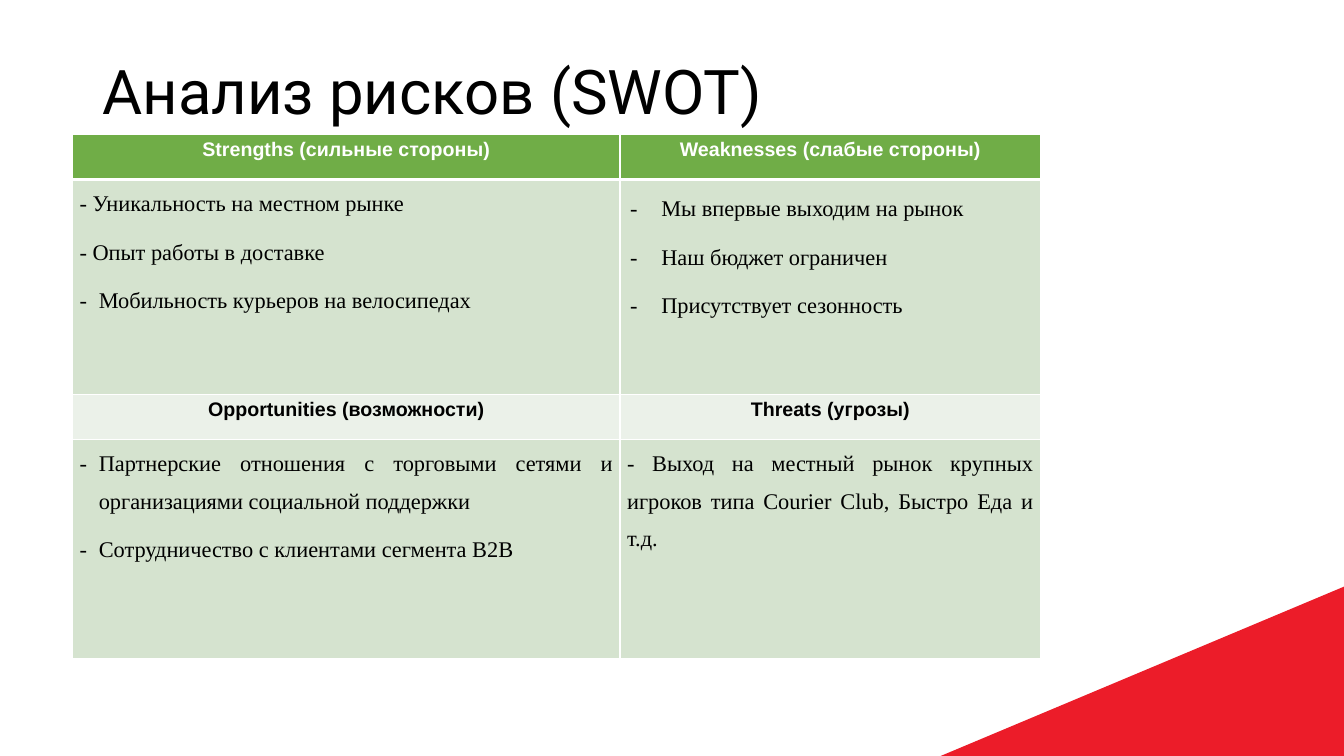
from dataclasses import dataclass

from lxml import etree
from pptx import Presentation, util as u
from pptx.dml.color import RGBColor
from pptx.enum import shapes, text
from pptx.oxml import ns


@dataclass(frozen=True)
class Theme:
    """Colours, fonts and type sizes of the slide."""
    white: str = "FFFFFF"
    black: str = "000000"
    red: str = "EC1C29"
    green: str = "70AD47"
    pale: str = "D5E3CF"
    paler: str = "EBF1E9"
    title_font: str = "Roboto"
    head_font: str = "Arial"
    body_font: str = "Times New Roman"
    title_size: int = 44
    head_size: int = 14
    body_size: int = 16


T = Theme()
COLS = (5.43, 4.17)
ROWS = (0.45, 2.13, 0.45, 2.17)
TIGHT = (0.07, 0)
LOOSE = (0.1, 0.05)

# Each quadrant: heading, cell insets, then (hanging indent, text) items.
STRENGTHS = ("Strengths (сильные стороны)", TIGHT, (
    (0, "- Уникальность на местном рынке"),
    (0, "- Опыт работы в доставке"),
    (0.19, "Мобильность курьеров на велосипедах")))
WEAKNESSES = ("Weaknesses (слабые стороны)", LOOSE, (
    (0.31, "Мы впервые выходим на рынок"),
    (0.31, "Наш бюджет ограничен"),
    (0.31, "Присутствует сезонность")))
OPPORTUNITIES = ("Opportunities (возможности)", TIGHT, (
    (0.19, "Партнерские отношения с торговыми сетями и "
           "организациями социальной поддержки"),
    (0.19, "Сотрудничество с клиентами сегмента B2B")))
THREATS = ("Threats (угрозы)", TIGHT, (
    (0, "- Выход на местный рынок крупных игроков типа "
        "Courier Club, Быстро Еда и т.д."),))
BANDS = (((STRENGTHS, WEAKNESSES), T.green, T.white),
         ((OPPORTUNITIES, THREATS), T.paler, T.black))


def add_run(p, words, font, size, color, bold=False):
    """Add one styled run to a paragraph."""
    r = p.add_run()
    r.text = words
    r.font.name, r.font.size, r.font.bold = font, u.Pt(size), bold
    r.font.color.rgb = RGBColor.from_string(color)


def add_xml(parent, tag, **attrs):
    """Append a drawing element and return it."""
    return etree.SubElement(parent, ns.qn(tag), attrs)


def add_dash(p, indent):
    """Give a paragraph a hanging dash bullet."""
    pPr = p._p.get_or_add_pPr()
    pPr.set("marL", str(u.Inches(indent)))
    pPr.set("indent", str(-u.Inches(indent)))
    add_xml(add_xml(pPr, "a:buClr"), "a:srgbClr", val=T.black)
    add_xml(pPr, "a:buFont", typeface=T.body_font)
    add_xml(pPr, "a:buChar", char="-")


def style_cell(cell, color, top=1, bottom=1):
    """Set the white borders and the fill of a cell."""
    tcPr = cell._tc.get_or_add_tcPr()
    for side, width in zip("LRTB", (1, 1, top, bottom)):
        ln = add_xml(tcPr, f"a:ln{side}", w=str(u.Pt(width)))
        add_xml(add_xml(ln, "a:solidFill"), "a:srgbClr", val=T.white)
    cell.fill.solid()
    cell.fill.fore_color.rgb = RGBColor.from_string(color)


def fill_heading(cell, words, color):
    """Write a centred quadrant heading."""
    p = cell.text_frame.paragraphs[0]
    p.alignment = text.PP_ALIGN.CENTER
    add_run(p, words, T.head_font, T.head_size, color, True)


def fill_items(cell, insets, items):
    """Write the justified items of a quadrant."""
    cell.margin_left = cell.margin_right = u.Inches(insets[0])
    cell.margin_top = cell.margin_bottom = u.Inches(insets[1])
    tf = cell.text_frame
    for i, (indent, words) in enumerate(items):
        p = tf.add_paragraph() if i else tf.paragraphs[0]
        p.alignment = text.PP_ALIGN.JUSTIFY
        p.line_spacing, p.space_after = 1.5, u.Pt(8)
        if indent:
            add_dash(p, indent)
        add_run(p, words, T.body_font, T.body_size, T.black)


def add_corner(s, x, y, w, h):
    """Draw the red corner triangle in its box."""
    sp = s.shapes.add_shape(shapes.MSO_SHAPE.RIGHT_TRIANGLE,
                            *map(u.Inches, (x, y, w, h)))
    sp.element.spPr.xfrm.set("flipH", "1")
    sp.shadow.inherit = False
    sp.fill.solid()
    sp.fill.fore_color.rgb = RGBColor.from_string(T.red)
    sp.line.fill.background()


def add_title(s, x, y, w, h):
    """Write the slide title in its box."""
    tf = s.shapes.add_textbox(*map(u.Inches, (x, y, w, h))).text_frame
    tf.word_wrap = True
    tf.vertical_anchor = text.MSO_ANCHOR.MIDDLE
    p = tf.paragraphs[0]
    p.line_spacing = 0.9
    add_run(p, "Анализ рисков (SWOT)", T.title_font, T.title_size, T.black)


def add_swot(s, x, y):
    """Build the SWOT table from its top left corner."""
    table = s.shapes.add_table(len(ROWS), len(COLS), *map(
        u.Inches, (x, y, sum(COLS), sum(ROWS)))).table
    for col, w in zip(table.columns, COLS):
        col.width = u.Inches(w)
    for row, h in zip(table.rows, ROWS):
        row.height = u.Inches(h)
    for band, (quadrants, fill, color) in enumerate(BANDS):
        rule = 1 if band else 3
        for c, (heading, insets, items) in enumerate(quadrants):
            head, body = (table.cell(2 * band + k, c) for k in (0, 1))
            style_cell(head, fill, bottom=rule)
            fill_heading(head, heading, color)
            style_cell(body, T.pale, top=rule)
            fill_items(body, insets, items)


def main():
    """Build and save the slide."""
    prs = Presentation()
    prs.slide_width, prs.slide_height = u.Inches(13.33), u.Inches(7.5)
    s = prs.slides.add_slide(prs.slide_layouts[6])
    add_corner(s, 9.33, 5.82, 4, 1.68)
    add_title(s, 0.92, 0.4, 11.5, 1.08)
    add_swot(s, 0.72, 1.33)
    prs.save("out.pptx")


if __name__ == "__main__":
    main()
